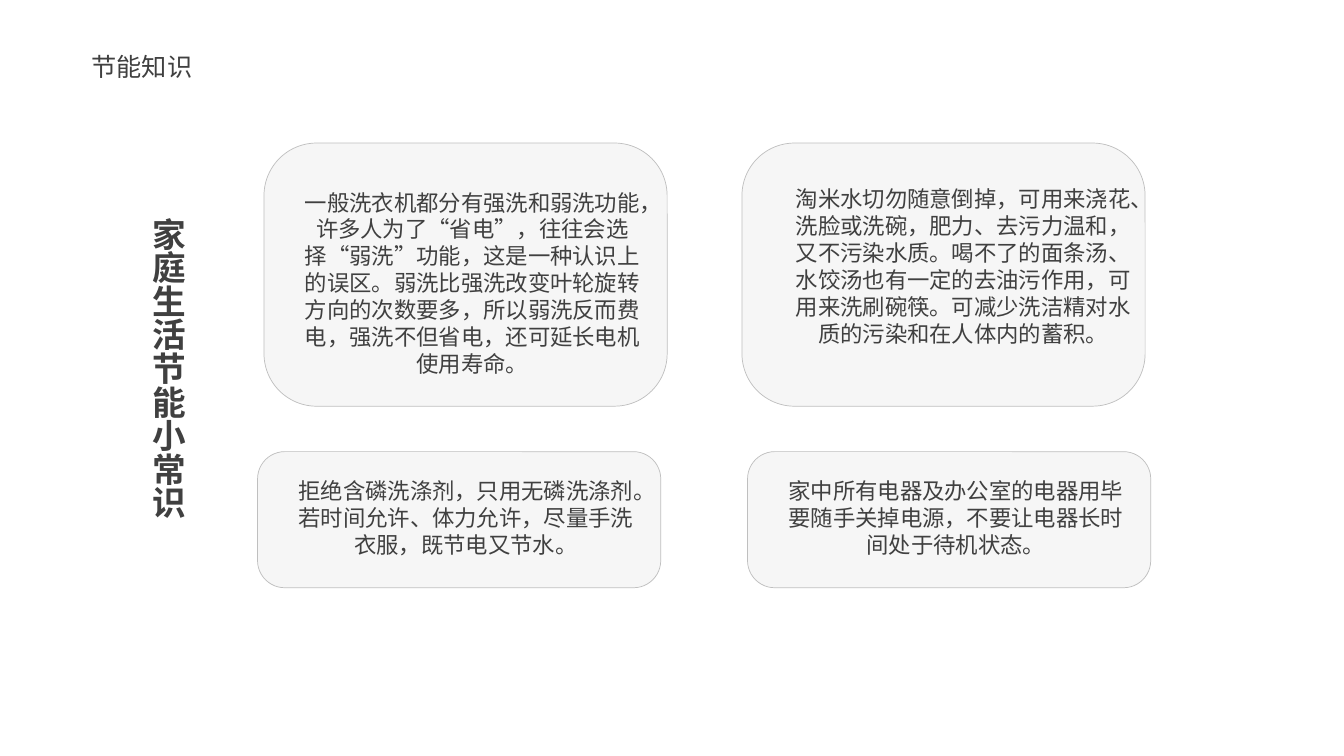
from dataclasses import dataclass

from lxml import etree
from pptx import Presentation, util as u
from pptx.dml.color import RGBColor
from pptx.enum import shapes, text
from pptx.oxml import ns

Pt = u.Pt


@dataclass(frozen=True)
class Theme:
    face: str = "Noto Sans CJK SC"
    ink: str = "404040"
    fill: str = "F2F2F2"
    edge: str = "BFBFBF"
    alpha: int = 68
    head: int = 18
    title: int = 24
    body: int = 16


class Board:
    def __init__(self, slide, theme):
        self.slide = slide
        self.theme = theme

    def label(self, box, words, size, align=None, bold=False, home=None):
        """Add a text box to home, a group, or else to the slide."""
        home = home or self.slide
        frame = home.shapes.add_textbox(*map(Pt, box)).text_frame
        frame.word_wrap = True
        para = frame.paragraphs[0]
        para.text = words
        para.alignment = align
        font = para.font
        font.size = Pt(size)
        font.bold = bold
        font.color.rgb = RGBColor.from_string(self.theme.ink)
        font.name = self.theme.face
        latin = para._p.pPr.find(".//" + ns.qn("a:latin"))
        east = etree.Element(ns.qn("a:ea"), typeface=self.theme.face)
        latin.addnext(east)
        return frame

    def column(self, box, words, size):
        """Add a bold title that runs from top to bottom."""
        frame = self.label(box, words, size, bold=True)
        frame.paragraphs[0].line_spacing = 1.5
        frame._txBody.bodyPr.set("vert", "eaVert")

    def panel(self, box, home):
        form = home.shapes.add_shape(
            shapes.MSO_SHAPE.ROUNDED_RECTANGLE, *map(Pt, box))
        form.adjustments[0] = 0.2
        form.shadow.inherit = False
        form.fill.solid()
        form.fill.fore_color.rgb = RGBColor.from_string(self.theme.fill)
        tint = form._element.spPr.find(".//" + ns.qn("a:srgbClr"))
        etree.SubElement(tint, ns.qn("a:alpha"),
                         val=str(self.theme.alpha * 1000))
        form.line.color.rgb = RGBColor.from_string(self.theme.edge)
        form.line.width = Pt(0.5)

    def card(self, box, inset, tall, words):
        """Group a panel with a text box set in from its top left corner."""
        group = self.slide.shapes.add_group_shape()
        self.panel(box, group)
        left, top = box[0] + inset[0], box[1] + inset[1]
        self.label((left, top, 268.6, tall), words, self.theme.body,
                   text.PP_ALIGN.CENTER, home=group)


WIDE = 288
UPPER, LOWER = (102.2, 188), (322.6, 97.2)
TIPS = [
    (188.6, UPPER, (14.6, 29), 143.3,
     "一般洗衣机都分有强洗和弱洗功能，许多人为了“省电”，往往会选择“弱洗”功能，"
     "这是一种认识上的误区。弱洗比强洗改变叶轮旋转方向的次数要多，"
     "所以弱洗反而费电，强洗不但省电，还可延长电机使用寿命。"),
    (530, UPPER, (23.8, 26.7), 123.8,
     "淘米水切勿随意倒掉，可用来浇花、洗脸或洗碗，肥力、去污力温和，又不污染水质。"
     "喝不了的面条汤、水饺汤也有一定的去油污作用，可用来洗刷碗筷。"
     "可减少洗洁精对水质的污染和在人体内的蓄积。"),
    (184, LOWER, (14.6, 15), 65.5,
     "拒绝含磷洗涤剂，只用无磷洗涤剂。若时间允许、体力允许，尽量手洗衣服，"
     "既节电又节水。"),
    (534, LOWER, (14.6, 15), 65.5,
     "家中所有电器及办公室的电器用毕要随手关掉电源，不要让电器长时间处于待机状态。"),
]


def main():
    deck = Presentation()
    deck.slide_width, deck.slide_height = Pt(960), Pt(540)
    theme = Theme()
    board = Board(deck.slides.add_slide(deck.slide_layouts[6]), theme)
    board.label((58.3, 33.1, 116, 29), "节能知识", theme.head,
                text.PP_ALIGN.JUSTIFY)
    for left, (top, high), inset, tall, words in TIPS:
        board.card((left, top, WIDE, high), inset, tall, words)
    board.column((94.3, 148.3, 58.3, 256.3), "家庭生活节能小常识", theme.title)
    deck.save("out.pptx")


if __name__ == "__main__":
    main()
